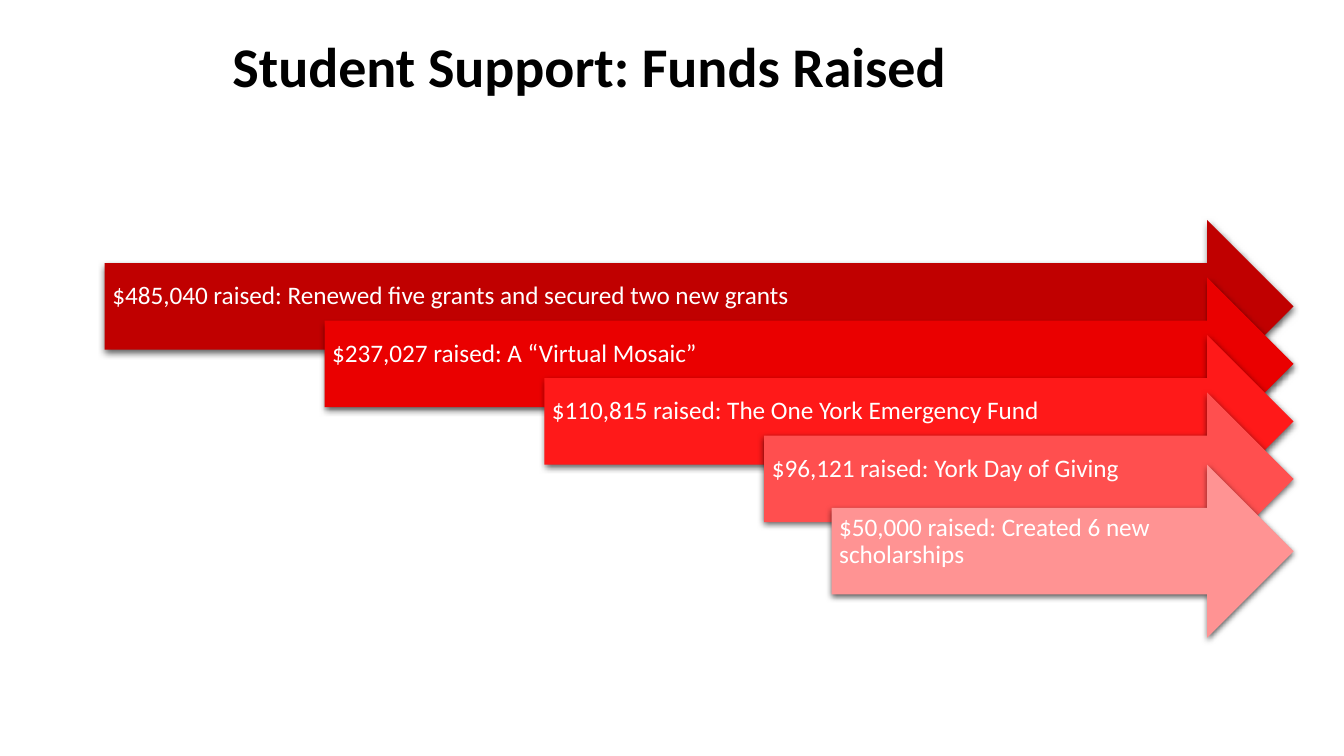
from dataclasses import dataclass

from lxml import etree
from pptx import Presentation
from pptx import util as u
from pptx.dml.color import RGBColor
from pptx.enum import shapes, text
from pptx.oxml import ns

FONT = "Calibri"
BLACK = RGBColor(0x00, 0x00, 0x00)
WHITE = RGBColor(0xFF, 0xFF, 0xFF)
DARK_RED = RGBColor(0xC0, 0x00, 0x00)
RED = RGBColor(0xEA, 0x00, 0x00)
BRIGHT_RED = RGBColor(0xFF, 0x19, 0x19)
CORAL = RGBColor(0xFF, 0x4F, 0x4F)
PINK = RGBColor(0xFF, 0x93, 0x93)

ARROW_TIP = 32.6
ARROW_HEIGHT = 4.36
FIRST_LEFT, LEFT_STEP = 2.64, 5.54
FIRST_TOP, TOP_STEP = 5.54, 1.45


@dataclass(frozen=True)
class Fund:
    label: str
    color: RGBColor
    left: float
    top: float


STEPPED_FUNDS = [
    ("$485,040 raised: Renewed five grants and secured two new grants", DARK_RED),
    ("$237,027 raised: A “Virtual Mosaic”", RED),
    ("$110,815 raised: The One York Emergency Fund", BRIGHT_RED),
    ("$96,121 raised: York Day of Giving", CORAL),
]
FUNDS = [
    Fund(label, color, FIRST_LEFT + i * LEFT_STEP, FIRST_TOP + i * TOP_STEP)
    for i, (label, color) in enumerate(STEPPED_FUNDS)
] + [Fund("$50,000 raised: Created 6 new scholarships", PINK, 20.96, 11.71)]


def write_text(tf, content: str, size: int, color: RGBColor, bold: bool = False) -> None:
    tf.text = content
    tf.word_wrap = True
    tf.vertical_anchor = text.MSO_ANCHOR.MIDDLE
    p = tf.paragraphs[0]
    p.alignment = text.PP_ALIGN.LEFT
    p.line_spacing = 0.9
    r = p.runs[0]
    r.font.name = FONT
    r.font.size = u.Pt(size)
    r.font.bold = bold
    r.font.color.rgb = color


def add_shadow(sp) -> None:
    sp.shadow.inherit = False
    effects = sp._element.spPr.find(ns.qn("a:effectLst"))
    shadow = etree.SubElement(
        effects, ns.qn("a:outerShdw"), blurRad=str(u.Pt(4.5)), dist=str(u.Pt(1.5)),
        dir="5400000", algn="ctr", rotWithShape="0",
    )
    color = etree.SubElement(shadow, ns.qn("a:srgbClr"), val=str(BLACK))
    etree.SubElement(color, ns.qn("a:alpha"), val="63000")


def add_title(s) -> None:
    sp = s.shapes.add_textbox(u.Cm(5.61), u.Cm(0.74), u.Cm(26.06), u.Cm(2.03))
    write_text(sp.text_frame, "Student Support: Funds Raised", 40, BLACK, bold=True)


def add_fund_arrow(s, fund: Fund) -> None:
    sp = s.shapes.add_shape(
        shapes.MSO_SHAPE.RIGHT_ARROW, u.Cm(fund.left), u.Cm(fund.top),
        u.Cm(ARROW_TIP - fund.left), u.Cm(ARROW_HEIGHT),
    )
    sp.fill.solid()
    sp.fill.fore_color.rgb = fund.color
    sp.line.fill.background()
    add_shadow(sp)
    tf = sp.text_frame
    tf.margin_left = tf.margin_top = u.Cm(0.19)
    tf.margin_right = u.Cm(0.71)
    tf.margin_bottom = u.Cm(0.68)
    write_text(tf, fund.label, 18, WHITE)


def main() -> None:
    prs = Presentation()
    prs.slide_width = u.Cm(33.87)
    prs.slide_height = u.Cm(19.05)
    s = prs.slides.add_slide(prs.slide_layouts[6])
    add_title(s)
    for fund in FUNDS:
        add_fund_arrow(s, fund)
    prs.save("out.pptx")


if __name__ == "__main__":
    main()
